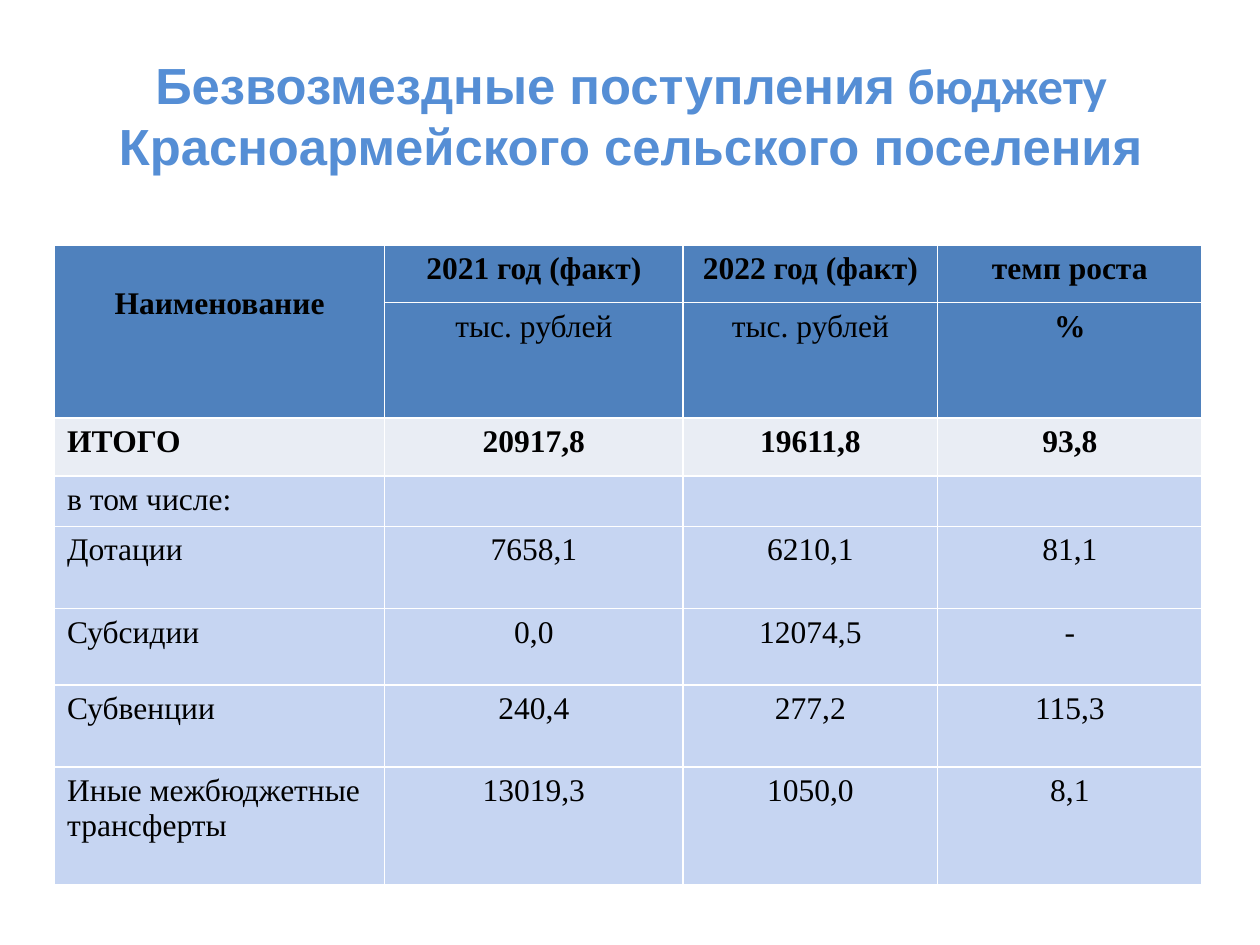
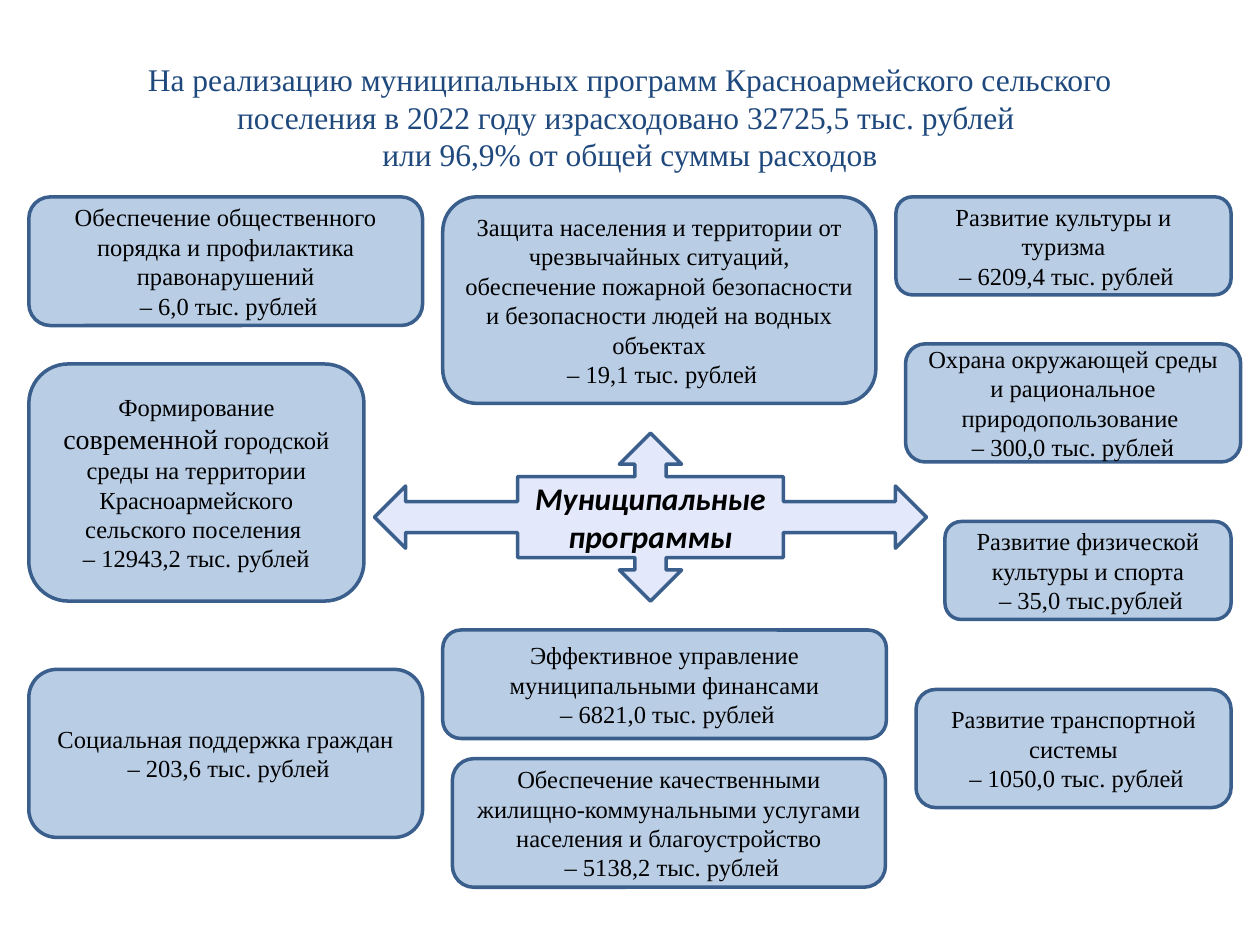
from lxml import etree
from pptx import Presentation
from pptx.dml.color import RGBColor
from pptx.enum.shapes import MSO_SHAPE
from pptx.enum.text import MSO_ANCHOR, PP_ALIGN
from pptx.oxml.ns import qn
from pptx.util import Pt

CENTER, LEFT = PP_ALIGN.CENTER, PP_ALIGN.LEFT
MIDDLE = MSO_ANCHOR.MIDDLE
ROUNDED = MSO_SHAPE.ROUNDED_RECTANGLE
CALLOUT = MSO_SHAPE.QUAD_ARROW_CALLOUT

BLACK = RGBColor(0x00, 0x00, 0x00)
TITLE_BLUE = RGBColor(0x55, 0x8E, 0xD5)
TITLE_NAVY = RGBColor(0x1F, 0x49, 0x7D)
HEADER_FILL = RGBColor(0x4F, 0x81, 0xBD)
TOTAL_FILL = RGBColor(0xE9, 0xED, 0xF4)
BODY_FILL = RGBColor(0xC6, 0xD5, 0xF2)
BOX_FILL = RGBColor(0xB9, 0xCD, 0xE5)
ARROW_FILL = RGBColor(0xE3, 0xE9, 0xFB)
OUTLINE = RGBColor(0x3A, 0x5F, 0x8C)
BORDER_HEX = "FFFFFF"

SERIF, SANS, CALIBRI = "Times New Roman", "Arial", "Calibri"

INCOME_TITLE = [
    ("Безвозмездные поступления", SANS),
    (" бюджету ", CALIBRI),
    ("Красноармейского сельского поселения", SANS),
]
INCOME_ROWS = [
    ("Наименование", "2021 год (факт)", "2022 год (факт)", "темп роста"),
    ("", "тыс. рублей", "тыс. рублей", "%"),
    ("ИТОГО", "20917,8", "19611,8", "93,8"),
    ("в том числе:", "", "", ""),
    ("Дотации", "7658,1", "6210,1", "81,1"),
    ("Субсидии", "0,0", "12074,5", "-"),
    ("Субвенции", "240,4", "277,2", "115,3"),
    ("Иные межбюджетные трансферты", "13019,3", "1050,0", "8,1"),
]
COLUMN_WIDTHS = [188.6, 170.6, 145.4, 151.2]
ROW_HEIGHTS = [33, 66, 33, 27, 47, 43.5, 47, 67.5]
ROW_FILLS = [HEADER_FILL] * 2 + [TOTAL_FILL] + [BODY_FILL] * 5
BOLD_ROWS = (0, 2)

PROGRAMS_TITLE = [(
    "На реализацию муниципальных программ Красноармейского сельского "
    "поселения в 2022 году израсходовано 32725,5 тыс. рублей \v"
    "или 96,9% от общей суммы расходов", SERIF)]
HUB = ((214, 247.5, 315.5, 96), "Муниципальные программы")
ENLARGED_WORD = "современной"
PROGRAMS = [
    ((16.5, 112.5, 225, 73.5),
     "Обеспечение общественного порядка и профилактика правонарушений",
     " – 6,0 тыс. рублей"),
    ((258.5, 433.5, 247.5, 73.5),
     "Обеспечение качественными жилищно-коммунальными услугами населения и благоустройство",
     " – 5138,2 тыс. рублей"),
    ((16.5, 208, 191.5, 135.5),
     "Формирование современной городской среды на территории "
     "Красноармейского сельского поселения ",
     "– 12943,2 тыс. рублей"),
    ((523.5, 394, 180, 67.5),
     "Развитие транспортной системы", " – 1050,0 тыс. рублей"),
    ((16.5, 382.5, 225, 96),
     "Социальная поддержка граждан", " – 203,6 тыс. рублей"),
    ((253, 360, 253.5, 62),
     "Эффективное управление муниципальными финансами", " – 6821,0 тыс. рублей"),
    ((540, 298, 163.5, 56),
     "Развитие физической культуры и спорта", " – 35,0 тыс.рублей"),
    ((517.5, 196.5, 191.5, 67.5),
     "Охрана окружающей среды и рациональное природопользование ",
     "– 300,0 тыс. рублей"),
    ((253, 112.5, 247.5, 118),
     "Защита населения и территории от чрезвычайных ситуаций, обеспечение "
     "пожарной безопасности и безопасности людей на водных объектах",
     " – 19,1 тыс. рублей"),
    ((512, 112.5, 191.5, 56),
     "Развитие культуры и туризма", " – 6209,4 тыс. рублей"),
]


def points(box):
    return [Pt(value) for value in box]


def style_font(font, name, size, color=BLACK, bold=False, italic=False):
    font.name, font.size = name, Pt(size)
    font.bold, font.italic = bold, italic
    font.color.rgb = color


def style_runs(paragraph, *style, alignment=CENTER, **options):
    paragraph.alignment = alignment
    for run in paragraph.runs:
        style_font(run.font, *style, **options)


def add_title(slide, box, parts, size, color, bold=False):
    text_frame = slide.shapes.add_textbox(*points(box)).text_frame
    text_frame.word_wrap = True
    text_frame.vertical_anchor = MIDDLE
    paragraph = text_frame.paragraphs[0]
    if len(parts) == 1:
        text, name = parts[0]
        paragraph.text = text
        style_runs(paragraph, name, size, color, bold)
    else:
        paragraph.alignment = CENTER
        for text, name in parts:
            run = paragraph.add_run()
            run.text = text
            style_font(run.font, name, size, color, bold)


def add_block(slide, kind, box, fill, text):
    shape = slide.shapes.add_shape(kind, *points(box))
    shape.shadow.inherit = False
    shape.fill.solid()
    shape.fill.fore_color.rgb = fill
    shape.line.color.rgb = OUTLINE
    shape.line.width = Pt(2)
    shape.text_frame.word_wrap = True
    shape.text_frame.vertical_anchor = MIDDLE
    shape.text_frame.text = text
    return shape.text_frame.paragraphs


def add_borders(cell):
    properties = cell._tc.get_or_add_tcPr()
    for side in ("a:lnL", "a:lnR", "a:lnT", "a:lnB"):
        line = etree.SubElement(properties, qn(side), w=str(Pt(1)))
        fill = etree.SubElement(line, qn("a:solidFill"))
        etree.SubElement(fill, qn("a:srgbClr"), val=BORDER_HEX)


def fill_cell(cell, text, fill, alignment, bold):
    add_borders(cell)
    cell.fill.solid()
    cell.fill.fore_color.rgb = fill
    if text:
        cell.text_frame.text = text
        style_runs(cell.text_frame.paragraphs[0], SERIF, 18, bold=bold,
                   alignment=alignment)
    else:
        cell.margin_top = cell.margin_bottom = 0


def add_income_table(slide):
    frame = slide.shapes.add_table(
        len(ROW_HEIGHTS), len(COLUMN_WIDTHS),
        *points((31.2, 140, sum(COLUMN_WIDTHS), sum(ROW_HEIGHTS))))
    table = frame.table
    for column, width in zip(table.columns, COLUMN_WIDTHS):
        column.width = Pt(width)
    for row, height in zip(table.rows, ROW_HEIGHTS):
        row.height = Pt(height)
    for row_index, texts in enumerate(INCOME_ROWS):
        for column_index, text in enumerate(texts):
            is_label = column_index == 0 and row_index > 1
            fill_cell(table.cell(row_index, column_index), text,
                      ROW_FILLS[row_index], LEFT if is_label else CENTER,
                      row_index in BOLD_ROWS or text == "%")
    name_cell = table.cell(0, 0)
    name_cell.merge(table.cell(1, 0))
    name_cell.margin_top = Pt(23.5)


def add_program(slide, box, name, amount):
    paragraphs = add_block(slide, ROUNDED, box, BOX_FILL, name + "\n" + amount)
    before, word, after = name.partition(ENLARGED_WORD)
    if word:
        paragraphs[0].text = before
        for text in (word, after):
            paragraphs[0].add_run().text = text
    for paragraph in paragraphs:
        style_runs(paragraph, SERIF, 14)
    if word:
        paragraphs[0].runs[1].font.size = Pt(16)


def main():
    presentation = Presentation()
    presentation.slide_width, presentation.slide_height = Pt(720), Pt(540)
    blank = presentation.slide_layouts[6]

    income_slide = presentation.slides.add_slide(blank)
    add_title(income_slide, (36.7, 26, 648, 79), INCOME_TITLE, 29, TITLE_BLUE, bold=True)
    add_income_table(income_slide)

    programs_slide = presentation.slides.add_slide(blank)
    add_title(programs_slide, (36, 21.6, 648, 90), PROGRAMS_TITLE, 18, TITLE_NAVY)
    hub_box, hub_text = HUB
    hub_paragraph = add_block(programs_slide, CALLOUT, hub_box, ARROW_FILL, hub_text)[0]
    style_runs(hub_paragraph, CALIBRI, 18, bold=True, italic=True)
    for program in PROGRAMS:
        add_program(programs_slide, *program)

    presentation.save("out.pptx")


if __name__ == "__main__":
    main()
